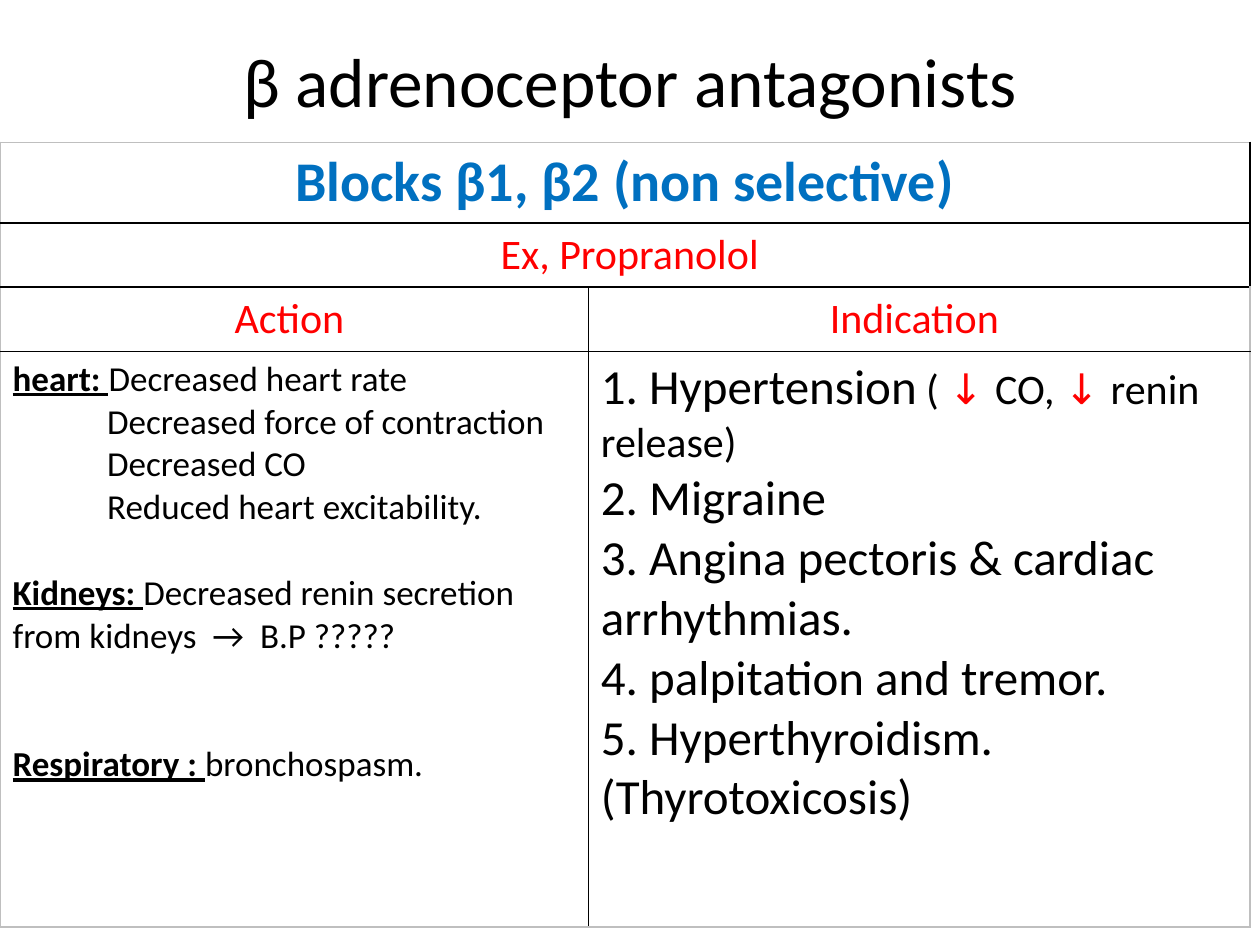
from dataclasses import dataclass
from typing import Optional

from lxml.etree import SubElement
from pptx import Presentation
from pptx.dml.color import RGBColor
from pptx.enum.text import MSO_ANCHOR, PP_ALIGN
from pptx.oxml.ns import qn
from pptx.util import Inches, Pt

COLORS = {"text": "000000", "heading": "0070C0", "accent": "FF0000",
          "inner": "000000", "outer": "BFBFBF"}
COL_WIDTHS = [4.67, 5.25]
ROW_HEIGHTS = [0.64, 0.51, 0.51, 4.57]


@dataclass
class Span:
    text: str
    size: float = 20
    color: str = "text"
    bold: bool = False
    underline: bool = False
    font: str = "Calibri"


@dataclass
class Para:
    spans: list[Span]
    align: Optional[PP_ALIGN] = None
    indent: float = 0
    before: float = 0


def centred(text: str, **style) -> list[Para]:
    return [Para([Span(text, **style)], PP_ALIGN.CENTER)]


def label(text: str) -> Span:
    return Span(text, bold=True, underline=True)


def arrow() -> Span:
    return Span("↓ ", 24, "accent", font="Quicksand")


ACTIONS = [
    Para([label("heart: "), Span("Decreased heart rate")]),
    *[Para([Span(effect)], indent=0.75) for effect in (
        "Decreased force of contraction", "Decreased CO",
        "Reduced heart excitability.")],
    Para([label("Kidneys: "),
          Span("Decreased renin secretion from kidneys  →  B.P ?????")],
         before=24.4),
    Para([label("Respiratory : "), Span("bronchospasm.")], before=48.8),
]
INDICATIONS = [
    Para([Span("1. Hypertension", 28), Span(" ( ", 24), arrow(),
          Span("CO, ", 24), arrow(), Span("renin release)", 24)]),
    *[Para([Span(item, 28)]) for item in (
        "2. Migraine", "3. Angina pectoris & cardiac arrhythmias.",
        "4. palpitation and tremor.",
        "5. Hyperthyroidism. (Thyrotoxicosis)")],
]
CELLS = {
    (0, 0): centred("Blocks β1, β2 (non selective)", size=32,
                    color="heading", bold=True),
    (1, 0): centred(" Ex, Propranolol", size=24, color="accent"),
    (2, 0): centred("Action ", size=24, color="accent"),
    (2, 1): centred("Indication ", size=24, color="accent"),
    (3, 0): ACTIONS,
    (3, 1): INDICATIONS,
}


def write(tf, paras: list[Para]) -> None:
    for i, para in enumerate(paras):
        p = tf.add_paragraph() if i else tf.paragraphs[0]
        p.alignment = para.align
        p.space_before = Pt(para.before)
        if para.indent:
            p._p.get_or_add_pPr().set("marL", str(Inches(para.indent)))
        for span in para.spans:
            r = p.add_run()
            r.text = span.text
            values = {"name": span.font, "size": Pt(span.size),
                      "bold": span.bold, "underline": span.underline}
            for name, value in values.items():
                setattr(r.font, name, value)
            r.font.color.rgb = RGBColor.from_string(COLORS[span.color])


def set_borders(cell, row: int, col: int) -> None:
    """Black lines inside the table, grey ones around it."""
    outer = {"lnL": col == 0, "lnR": col == len(COL_WIDTHS) - 1,
             "lnT": row == 0, "lnB": row == len(ROW_HEIGHTS) - 1}
    tcPr = cell._tc.get_or_add_tcPr()
    for side, is_outer in outer.items():
        ln = SubElement(tcPr, qn(f"a:{side}"), w=str(Pt(1)))
        fill = SubElement(ln, qn("a:solidFill"))
        SubElement(fill, qn("a:srgbClr"),
                   val=COLORS["outer" if is_outer else "inner"])


def add_title(slide) -> None:
    tf = slide.shapes.add_textbox(Inches(0.5), Inches(0.3), Inches(9),
                                  Inches(1.25)).text_frame
    values = {"word_wrap": True, "vertical_anchor": MSO_ANCHOR.TOP,
              "margin_top": 0, "margin_bottom": 0}
    for name, value in values.items():
        setattr(tf, name, value)
    write(tf, centred("β adrenoceptor antagonists", size=39.6))


def add_drug_table(slide) -> None:
    table = slide.shapes.add_table(
        len(ROW_HEIGHTS), len(COL_WIDTHS), Inches(0), Inches(1.13),
        Inches(sum(COL_WIDTHS)), Inches(sum(ROW_HEIGHTS))).table
    table.first_row = table.horz_banding = False
    for column, width in zip(table.columns, COL_WIDTHS):
        column.width = Inches(width)
    for i, height in enumerate(ROW_HEIGHTS):
        table.rows[i].height = Inches(height)
        for j in range(len(COL_WIDTHS)):
            cell = table.cell(i, j)
            set_borders(cell, i, j)
            cell.fill.background()
            if (i, j) in CELLS:
                write(cell.text_frame, CELLS[i, j])
    for i in (0, 1):
        table.cell(i, 0).merge(table.cell(i, 1))


def main() -> None:
    prs = Presentation()
    prs.slide_width, prs.slide_height = Inches(10), Inches(7.5)
    slide = prs.slides.add_slide(prs.slide_layouts[6])
    add_title(slide)
    add_drug_table(slide)
    prs.save("out.pptx")


if __name__ == "__main__":
    main()
